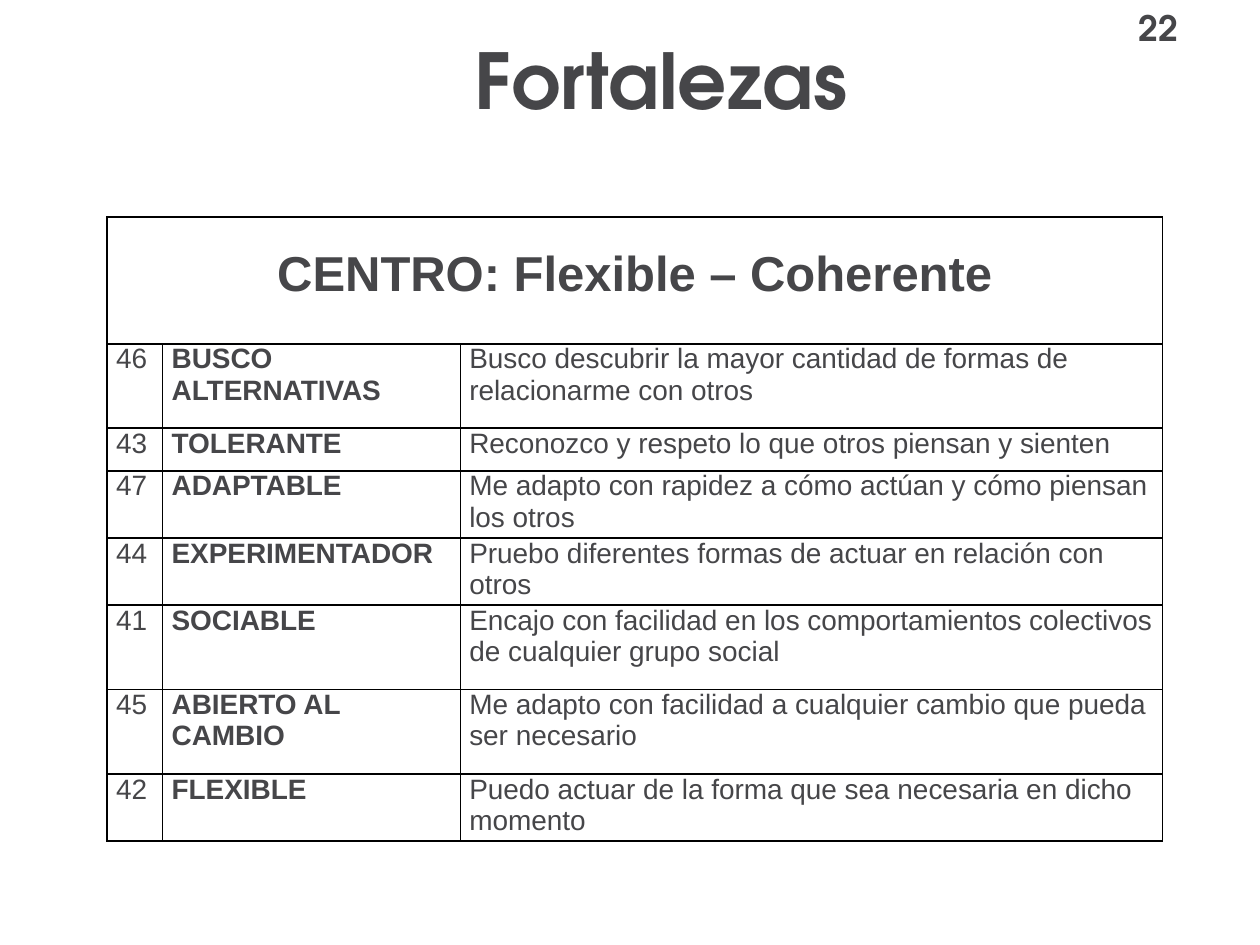
from pptx import Presentation
from pptx.dml.color import RGBColor as Color
from pptx.enum.text import MSO_ANCHOR as Anchor, PP_ALIGN as Align
from pptx.oxml import parse_xml
from pptx.oxml.ns import nsdecls
from pptx.util import Cm, Pt

COLORS = {"text": "464649", "border": "000000"}
HEADING_FONT, BODY_FONT = "TeX Gyre Adventor", "Arial"

PAGE_NUMBER = "22"
TITLE = "Fortalezas"
TABLE_HEADING = "CENTRO: Flexible – Coherente"
STRENGTHS = [
    ("46", "BUSCO ALTERNATIVAS", "Busco descubrir la mayor cantidad de formas de relacionarme con otros"),
    ("43", "TOLERANTE", "Reconozco y respeto lo que otros piensan y sienten"),
    ("47", "ADAPTABLE", "Me adapto con rapidez a cómo actúan y cómo piensan los otros"),
    ("44", "EXPERIMENTADOR", "Pruebo diferentes formas de actuar en relación con otros"),
    ("41", "SOCIABLE", "Encajo con facilidad en los comportamientos colectivos de cualquier grupo social"),
    ("45", "ABIERTO AL CAMBIO", "Me adapto con facilidad a cualquier cambio que pueda ser necesario"),
    ("42", "FLEXIBLE", "Puedo actuar de la forma que sea necesaria en dicho momento"),
]
COLUMN_WIDTHS = [1.12, 6, 14.15]
ROW_HEIGHTS = [2.56, 1.7, 0.86, 1.25, 1.25, 1.7, 1.7, 1.25]


def write(text_frame, text, size, font_name, bold, align=Align.LEFT):
    text_frame.text = text
    paragraph = text_frame.paragraphs[0]
    paragraph.alignment = align
    font = paragraph.runs[0].font
    font.size, font.name, font.bold = Pt(size), font_name, bold
    font.color.rgb = Color.from_string(COLORS["text"])


def add_heading(slide, box, text, size, align):
    text_frame = slide.shapes.add_textbox(*map(Cm, box)).text_frame
    text_frame.word_wrap = True
    text_frame.vertical_anchor = Anchor.MIDDLE
    write(text_frame, text, size, HEADING_FONT, True, align)


def style_cell(cell):
    cell.margin_left = cell.margin_right = Cm(0.18)
    cell.margin_top = cell.margin_bottom = 0
    properties = cell._tc.get_or_add_tcPr()
    for side in ("lnL", "lnR", "lnT", "lnB"):
        properties.append(parse_xml(
            f'<a:{side} {nsdecls("a")} w="{Pt(1)}"><a:solidFill>'
            f'<a:srgbClr val="{COLORS["border"]}"/></a:solidFill></a:{side}>'))
    cell.fill.background()


def add_strengths_table(slide):
    frame = slide.shapes.add_table(
        len(ROW_HEIGHTS), len(COLUMN_WIDTHS), Cm(2.16), Cm(4.37),
        Cm(sum(COLUMN_WIDTHS)), Cm(sum(ROW_HEIGHTS)))
    table = frame.table
    table.first_row = table.horz_banding = False
    for column, width in zip(table.columns, COLUMN_WIDTHS):
        column.width = Cm(width)
    for row, height in zip(table.rows, ROW_HEIGHTS):
        row.height = Cm(height)
        for cell in row.cells:
            style_cell(cell)

    heading = table.cell(0, 0)
    heading.merge(table.cell(0, len(COLUMN_WIDTHS) - 1))
    heading.margin_top = Cm(0.62)
    write(heading.text_frame, TABLE_HEADING, 28, BODY_FONT, True, Align.CENTER)

    for row_index, strength in enumerate(STRENGTHS, start=1):
        for column_index, text in enumerate(strength):
            cell = table.cell(row_index, column_index)
            write(cell.text_frame, text, 16, BODY_FONT, column_index == 1)


def main():
    presentation = Presentation()
    presentation.slide_width, presentation.slide_height = Cm(25.4), Cm(19.05)
    slide = presentation.slides.add_slide(presentation.slide_layouts[6])
    add_heading(slide, (22.7, 0, 2.4, 1.11), PAGE_NUMBER, 20, Align.LEFT)
    add_heading(slide, (1.9, 0, 22.86, 3.18), TITLE, 44, Align.CENTER)
    add_strengths_table(slide)
    presentation.save("out.pptx")


if __name__ == "__main__":
    main()
